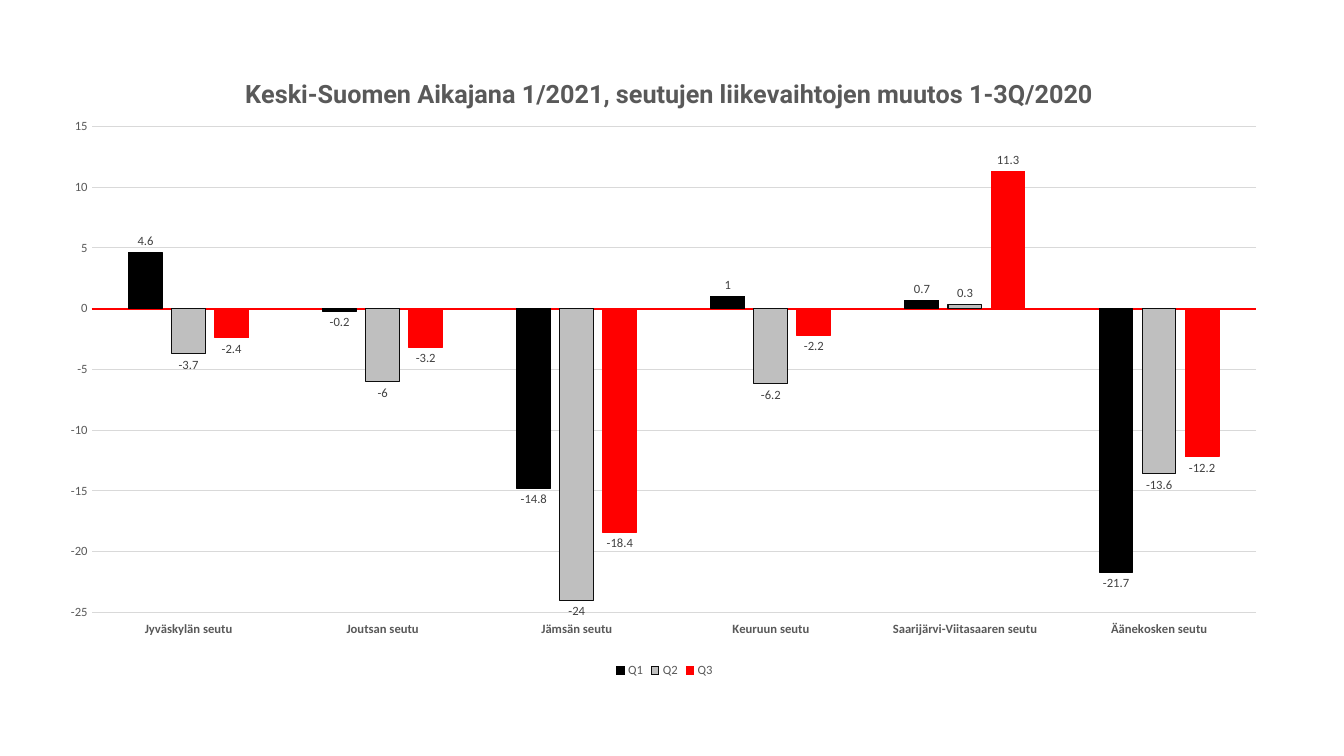
from lxml import etree
from pptx import Presentation
from pptx import util as u
from pptx.chart.data import CategoryChartData
from pptx.dml.color import RGBColor
from pptx.enum import chart as ch
from pptx.oxml.ns import qn

W, H = 13.33, 7.5
FRAME = (0.036, 0.067, 0.917, 0.835)
TITLE = "Keski-Suomen Aikajana 1/2021, seutujen liikevaihtojen muutos 1-3Q/2020"
REGIONS = ["Jyväskylän seutu", "Joutsan seutu", "Jämsän seutu", "Keuruun seutu",
           "Saarijärvi-Viitasaaren seutu", "Äänekosken seutu"]
QUARTERS = [
    ("Q1", (4.6, -0.2, -14.8, 1, 0.7, -21.7), "000000", "000000"),
    ("Q2", (-3.7, -6, -24, -6.2, 0.3, -13.6), "BFBFBF", "0D0D0D"),
    ("Q3", (-2.4, -3.2, -18.4, -2.2, 11.3, -12.2), "FF0000", "FF0000"),
]


def rgb(value):
    return RGBColor.from_string(value)


def put(obj, **values):
    for name, value in values.items():
        setattr(obj, name, value)


def style_font(font, size=9, color="595959", name="Calibri", bold=False):
    put(font, size=u.Pt(size), name=name, bold=bold)
    font.color.rgb = rgb(color)


def style_line(fmt, color, width=0.75):
    fmt.line.color.rgb = rgb(color)
    fmt.line.width = u.Pt(width)


def place(element, index, **values):
    for old in element.findall(qn("c:layout")):
        element.remove(old)
    layout = etree.Element(qn("c:layout"))
    manual = etree.SubElement(layout, qn("c:manualLayout"))
    for name, value in values.items():
        etree.SubElement(manual, qn("c:" + name)).set("val", str(value))
    element.insert(index, layout)


def add_title(chart):
    tf = chart.chart_title.text_frame
    tf.text = TITLE
    style_font(tf.paragraphs[0].runs[0].font, 18, name="Roboto", bold=True)
    title = chart._chartSpace.find(".//" + qn("c:title"))
    place(title, 1, xMode="edge", yMode="edge", x=0.156, y=0.035)


def style_axes(chart):
    none = ch.XL_TICK_MARK.NONE
    for axis in (chart.category_axis, chart.value_axis):
        put(axis, major_tick_mark=none, minor_tick_mark=none)
    cat, val = chart.category_axis, chart.value_axis
    cat.tick_label_position = ch.XL_TICK_LABEL_POSITION.LOW
    style_font(cat.tick_labels.font, bold=True)
    style_line(cat.format, "FF0000", 1.5)
    put(val, minimum_scale=-25, maximum_scale=15, major_unit=5)
    style_font(val.tick_labels.font)
    val.format.line.fill.background()
    style_line(val.major_gridlines.format, "D9D9D9")


def style_series(plot):
    put(plot, gap_width=219, overlap=-27, vary_by_categories=False)
    for s, (_, _, fill, line) in zip(plot.series, QUARTERS):
        s.invert_if_negative = False
        s.format.fill.solid()
        s.format.fill.fore_color.rgb = rgb(fill)
        style_line(s.format, line)
        put(s.data_labels, show_value=True,
            position=ch.XL_LABEL_POSITION.OUTSIDE_END)
        style_font(s.data_labels.font, color="404040")


def add_column_chart(slide):
    data = CategoryChartData()
    data.categories = REGIONS
    for name, values, _, _ in QUARTERS:
        data.add_series(name, values)
    box = [u.Inches(share * side) for share, side in zip(FRAME, (W, H, W, H))]
    chart = slide.shapes.add_chart(
        ch.XL_CHART_TYPE.COLUMN_CLUSTERED, *box, data).chart
    style_font(chart.font, 10, "000000")
    add_title(chart)
    style_axes(chart)
    style_series(chart.plots[0])
    chart.has_legend = True
    put(chart.legend, position=ch.XL_LEGEND_POSITION.BOTTOM,
        include_in_layout=False)
    style_font(chart.legend.font)
    area = chart._chartSpace.find(".//" + qn("c:plotArea"))
    place(area, 0, layoutTarget="inner", xMode="edge", yMode="edge",
          x=0.035, y=0.12, w=0.945, h=0.77)


def main():
    prs = Presentation()
    put(prs, slide_width=u.Inches(W), slide_height=u.Inches(H))
    add_column_chart(prs.slides.add_slide(prs.slide_layouts[6]))
    prs.save("out.pptx")


if __name__ == "__main__":
    main()
